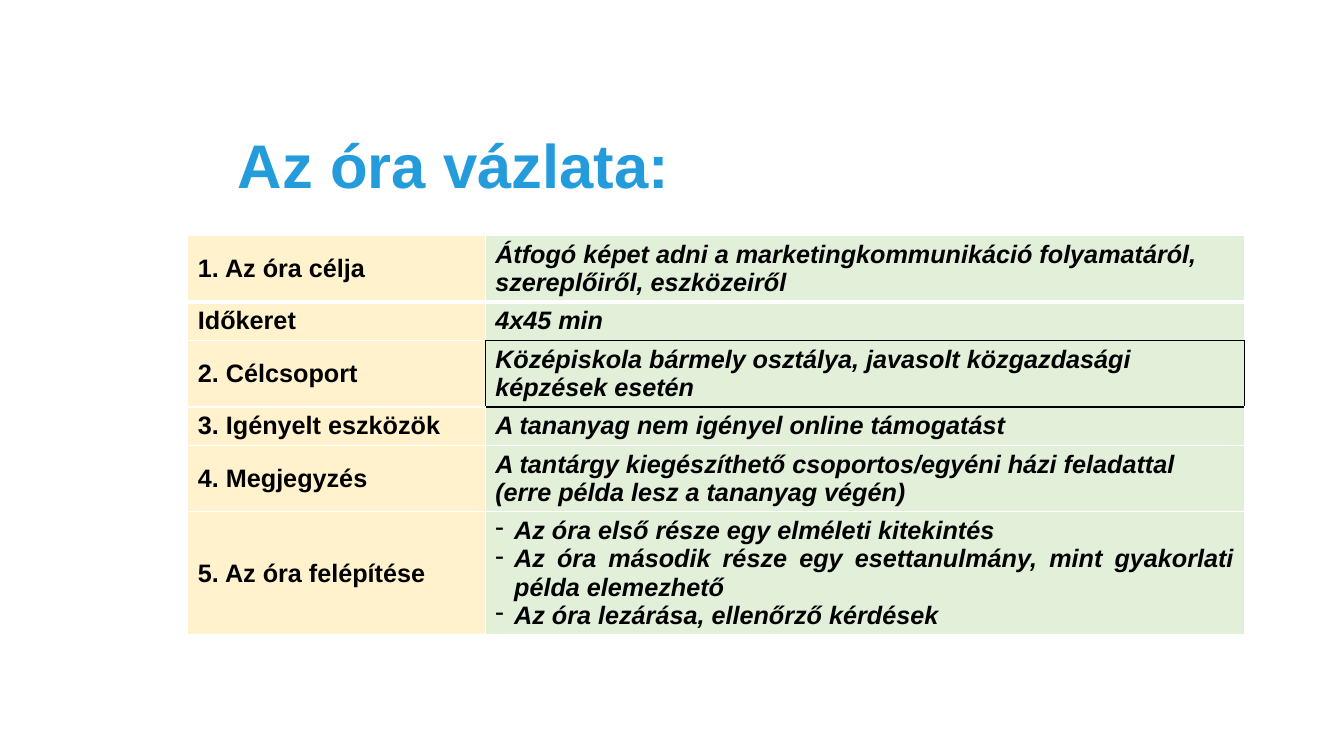
from lxml import etree
from pptx import Presentation
from pptx import util as u
from pptx.dml import color
from pptx.enum import text
from pptx.oxml import ns

LABEL_FILL = "FFF2CC"
CONTENT_FILL = "E2F0D9"
WHITE = "FFFFFF"
BLACK = "000000"
OUTLINED_ROW = 2
ROWS = [
    (47, "1. Az óra célja", ["Átfogó képet adni a marketingkommunikáció folyamatáról, szereplőiről, eszközeiről"]),
    (27, "Időkeret", ["4x45 min"]),
    (47, "2. Célcsoport", ["Középiskola bármely osztálya, javasolt közgazdasági képzések esetén"]),
    (27, "3. Igényelt eszközök", ["A tananyag nem igényel online támogatást"]),
    (47, "4. Megjegyzés", ["A tantárgy kiegészíthető csoportos/egyéni házi feladattal (erre példa lesz a tananyag végén)"]),
    (87, "5. Az óra felépítése", [
        "Az óra első része egy elméleti kitekintés",
        "Az óra második része egy esettanulmány, mint gyakorlati példa elemezhető",
        "Az óra lezárása, ellenőrző kérdések",
    ]),
]


def rgb(value):
    """Return the colour for a hex string."""
    return color.RGBColor.from_string(value)


def add_dash(paragraph):
    """Give a paragraph a dash bullet with a hanging indent."""
    properties = paragraph._p.get_or_add_pPr()
    properties.set("marL", str(u.Pt(13.5)))
    properties.set("indent", str(-u.Pt(13.5)))
    etree.SubElement(properties, ns.qn("a:buChar"), char="-")


def write(frame, lines, size=18, colour=BLACK, italic=False, align=text.PP_ALIGN.LEFT, spacing=None, dashed=False):
    """Write formatted paragraphs into a text frame."""
    for index, line in enumerate(lines):
        paragraph = frame.paragraphs[0] if index == 0 else frame.add_paragraph()
        paragraph.alignment = align
        if spacing:
            paragraph.line_spacing = spacing
        if dashed:
            add_dash(paragraph)
        run = paragraph.add_run()
        run.text = line
        run.font.name = "Arial"
        run.font.size = u.Pt(size)
        run.font.bold = True
        run.font.italic = italic
        run.font.color.rgb = rgb(colour)


def add_border(cell, side, colour, width):
    """Draw one side of a cell border."""
    line = etree.SubElement(cell._tc.get_or_add_tcPr(), ns.qn(f"a:ln{side}"), w=str(u.Pt(width)))
    fill = etree.SubElement(line, ns.qn("a:solidFill"))
    etree.SubElement(fill, ns.qn("a:srgbClr"), val=colour)


def border_colour(row, column, side):
    """Return black for every side that touches the outlined cell."""
    touching = {(OUTLINED_ROW - 1, 1, "B"), (OUTLINED_ROW, 0, "R"), (OUTLINED_ROW + 1, 1, "T")}
    outlined = (row, column) == (OUTLINED_ROW, 1) or (row, column, side) in touching
    return BLACK if outlined else WHITE


def format_cell(cell, row, column, fill):
    """Set the borders, fill and anchor of a cell."""
    for side in "LRTB":
        heavy = (row, side) in {(0, "B"), (1, "T")}
        add_border(cell, side, border_colour(row, column, side), 3 if heavy else 1)
    cell.fill.solid()
    cell.fill.fore_color.rgb = rgb(fill)
    cell.vertical_anchor = text.MSO_ANCHOR.MIDDLE


def add_title(slide, title):
    """Place and format the slide title."""
    shape = slide.shapes.title
    shape.left, shape.top, shape.width, shape.height = u.Pt(162.7), u.Pt(64.8), u.Pt(649.4), u.Pt(110.9)
    shape.text_frame.vertical_anchor = text.MSO_ANCHOR.MIDDLE
    write(shape.text_frame, [title], size=44, colour="249CDC", spacing=0.9)


def add_outline_table(slide):
    """Add the table with the lesson outline."""
    height = sum(row[0] for row in ROWS)
    shape = slide.shapes.add_table(len(ROWS), 2, u.Pt(134.2), u.Pt(168.2), u.Pt(754.6), u.Pt(height))
    table = shape.table
    table.first_row = table.horz_banding = False
    table.columns[0].width, table.columns[1].width = u.Pt(212.4), u.Pt(542.2)
    for row, (row_height, label, lines) in enumerate(ROWS):
        table.rows[row].height = u.Pt(row_height)
        label_cell, content_cell = table.cell(row, 0), table.cell(row, 1)
        format_cell(label_cell, row, 0, LABEL_FILL)
        format_cell(content_cell, row, 1, CONTENT_FILL)
        listed = len(lines) > 1
        align = text.PP_ALIGN.JUSTIFY if listed else text.PP_ALIGN.LEFT
        write(label_cell.text_frame, [label], align=text.PP_ALIGN.JUSTIFY)
        write(content_cell.text_frame, lines, italic=True, align=align, dashed=listed)


def main():
    """Build and save the presentation."""
    presentation = Presentation()
    presentation.slide_width, presentation.slide_height = u.Pt(960), u.Pt(540)
    slide = presentation.slides.add_slide(presentation.slide_layouts[5])
    add_title(slide, "Az óra vázlata:")
    add_outline_table(slide)
    presentation.save("out.pptx")


if __name__ == "__main__":
    main()
